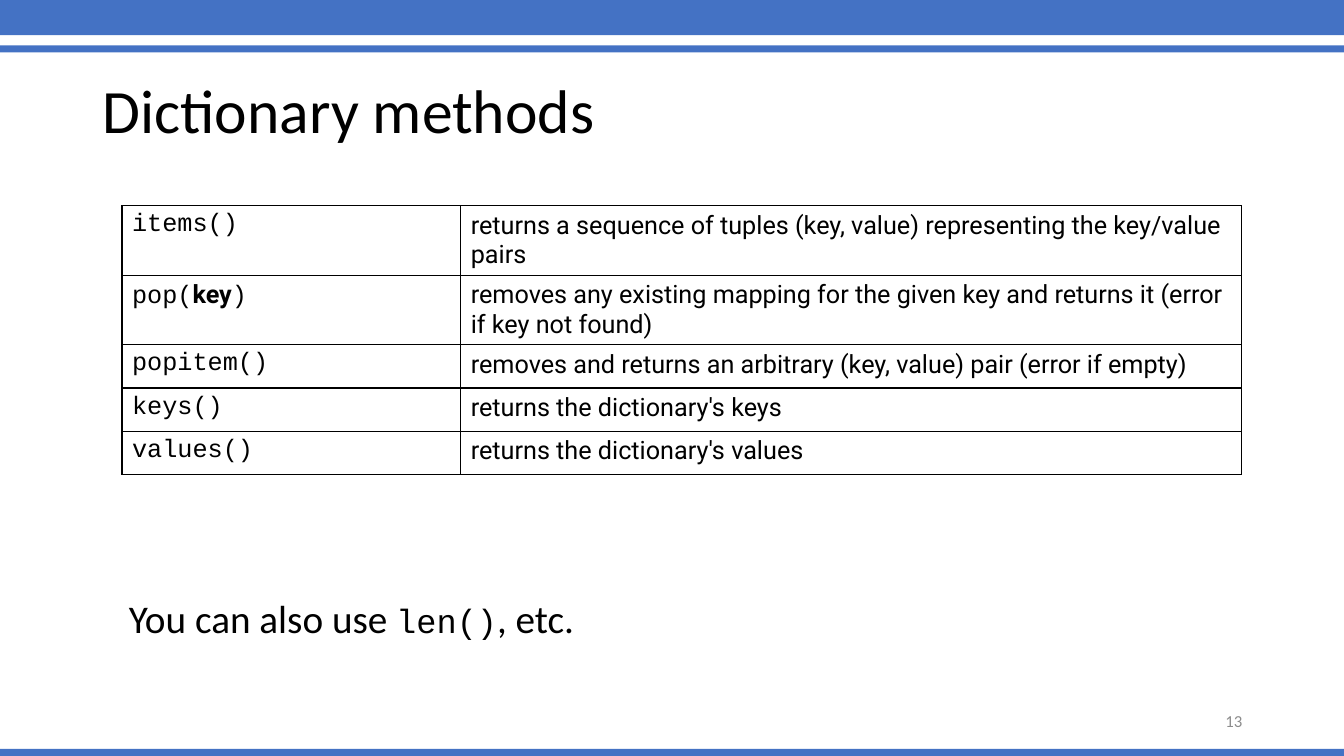
"""Build the slide on dictionary methods."""
from lxml import etree
from pptx import Presentation
from pptx import util as u
from pptx.dml.color import RGBColor
from pptx.enum import shapes, text
from pptx.oxml import ns

COLORS = {"bar": "4472C4", "ink": "000000", "number": "8C8C8C", "page": "FFFFFF"}
BODY, CODE, TABLE = "Calibri", "Courier New", "Roboto"

BARS = [(-0.03, 0.38), (0.45, 0.07), (7.43, 0.07)]
METHODS = [
    ([("items()", CODE)],
     "returns a sequence of tuples (key, value) representing the key/value pairs"),
    ([("pop(", CODE), ("key", TABLE, True), (")", CODE)],
     "removes any existing mapping for the given key and returns it (error if key not found)"),
    ([("popitem()", CODE)],
     "removes and returns an arbitrary (key, value) pair (error if empty)"),
    ([("keys()", CODE)], "returns the dictionary's keys"),
    ([("values()", CODE)], "returns the dictionary's values"),
]
TABLE_AT = (1.21, 2.04)
COLUMNS = [3.36, 7.74]
ROWS = [0.69, 0.69, 0.43, 0.43, 0.43]
TEXTS = [
    {"at": (0.92, 0.4, 11.5, 1.45), "runs": [("Dictionary methods", BODY, False, 44)],
     "format": {"line_spacing": 0.9}},
    {"at": (1.18, 5.43, 11.24, 1.45),
     "runs": [("You can also use ", BODY, False, 28), ("len()", CODE, False, 24),
              (", etc.", BODY, False, 28)],
     "format": {"line_spacing": 0.9}},
    {"at": (9.42, 6.95, 3, 0.4), "runs": [("13", BODY, False, 12)], "color": "number",
     "format": {"alignment": text.PP_ALIGN.RIGHT}},
]


def rgb(name):
    return RGBColor.from_string(COLORS[name])


def write(para, runs, color="ink"):
    for words, font, bold, size in runs:
        span = para.add_run()
        span.text = words
        values = {"name": font, "bold": bold, "size": u.Pt(size)}
        for key, value in values.items():
            setattr(span.font, key, value)
        span.font.color.rgb = rgb(color)


def add_bar(page, width, top, height):
    bar = page.shapes.add_shape(
        shapes.MSO_SHAPE.RECTANGLE, 0, u.Inches(top), width, u.Inches(height))
    bar.shadow.inherit = False
    bar.fill.solid()
    bar.fill.fore_color.rgb = rgb("bar")
    bar.line.fill.background()


def add_text(page, item):
    box = page.shapes.add_textbox(*map(u.Inches, item["at"]))
    box.text_frame.word_wrap = True
    box.text_frame.vertical_anchor = text.MSO_ANCHOR.MIDDLE
    para = box.text_frame.paragraphs[0]
    for key, value in item["format"].items():
        setattr(para, key, value)
    write(para, item["runs"], item.get("color", "ink"))


def add_borders(cell):
    properties = cell._tc.get_or_add_tcPr()
    for index, side in enumerate(("lnL", "lnR", "lnT", "lnB")):
        line = etree.Element(ns.qn("a:" + side), w=str(u.Pt(1)))
        fill = etree.SubElement(line, ns.qn("a:solidFill"))
        etree.SubElement(fill, ns.qn("a:srgbClr"), val=COLORS["ink"])
        properties.insert(index, line)


def add_methods(page):
    size = (sum(COLUMNS), sum(ROWS))
    frame = page.shapes.add_table(
        len(METHODS), len(COLUMNS), *map(u.Inches, TABLE_AT + size))
    table = frame.table
    table.first_row = table.horz_banding = False
    for column, width in zip(table.columns, COLUMNS):
        column.width = u.Inches(width)
    for row, height, (name, meaning) in zip(table.rows, ROWS, METHODS):
        row.height = u.Inches(height)
        for cell, runs in zip(row.cells, (name, [(meaning, TABLE)])):
            cell.fill.solid()
            cell.fill.fore_color.rgb = rgb("page")
            add_borders(cell)
            write(cell.text_frame.paragraphs[0],
                  [(run[0], run[1], len(run) > 2, 18) for run in runs])


def main():
    deck = Presentation()
    deck.slide_width, deck.slide_height = u.Inches(13.33), u.Inches(7.5)
    page = deck.slides.add_slide(deck.slide_layouts[6])
    for top, height in BARS:
        add_bar(page, deck.slide_width, top, height)
    add_methods(page)
    for item in TEXTS:
        add_text(page, item)
    deck.save("out.pptx")


if __name__ == "__main__":
    main()
